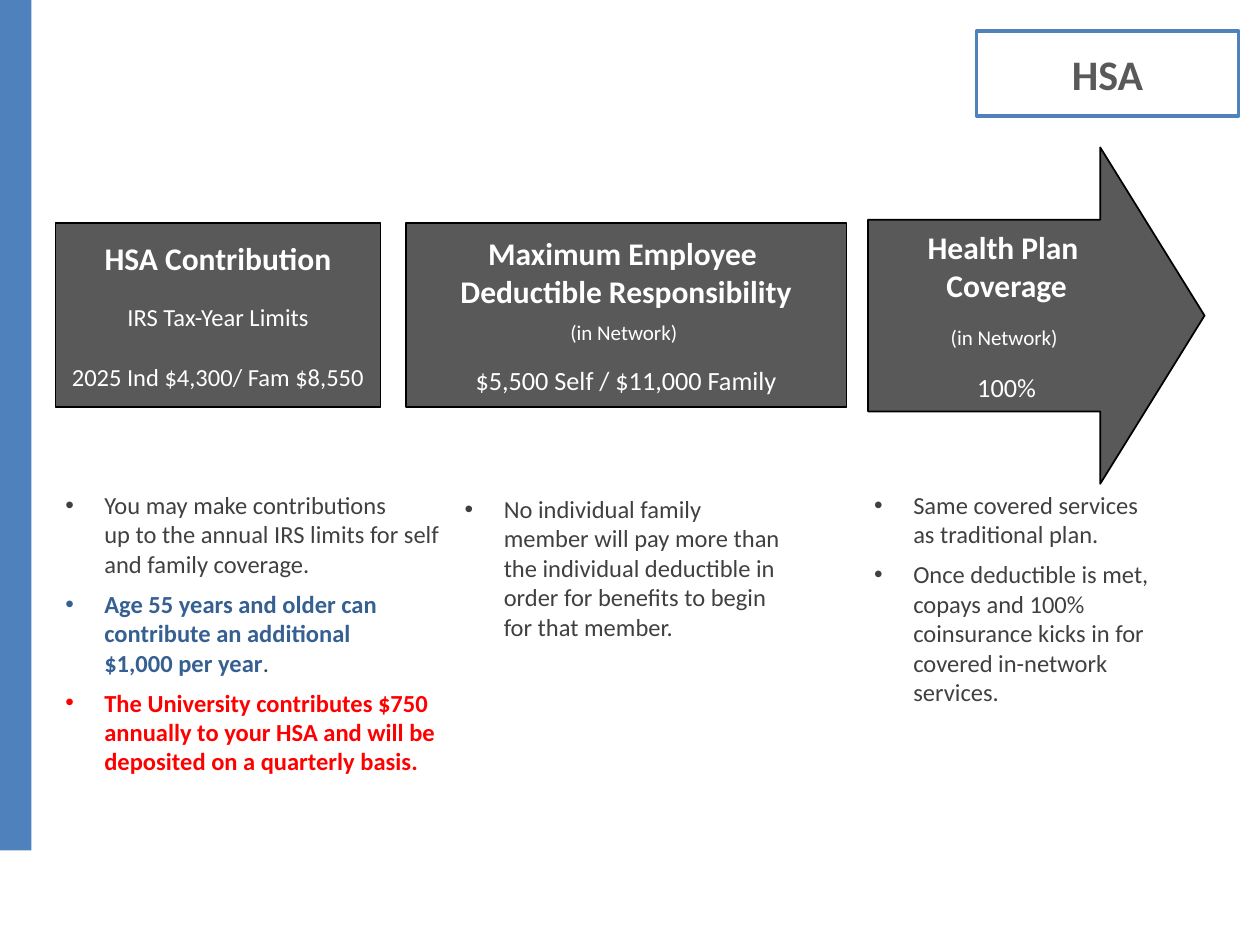
from dataclasses import dataclass

from lxml.etree import SubElement
from pptx import Presentation
from pptx.dml.color import RGBColor
from pptx.enum.shapes import MSO_SHAPE as Preset
from pptx.enum.text import MSO_ANCHOR as Anchor, PP_ALIGN as Align
from pptx.oxml.ns import qn
from pptx.util import Inches, Pt

BLUE = RGBColor(0x4F, 0x81, 0xBD)
DARK_BLUE = RGBColor(0x37, 0x60, 0x92)
GRAY = RGBColor(0x59, 0x59, 0x59)
TEXT_GRAY = RGBColor(0x40, 0x40, 0x40)
RED = RGBColor(0xFF, 0, 0)
WHITE = RGBColor(0xFF, 0xFF, 0xFF)
BLACK = RGBColor(0, 0, 0)
FONT = "Calibri"
INDENT = Inches(0.31)


@dataclass(frozen=True)
class Box:
    left: float
    top: float
    width: float
    height: float

    def lengths(self) -> list:
        return [Inches(v) for v in (self.left, self.top, self.width, self.height)]


@dataclass(frozen=True)
class Line:
    text: str
    size: float
    bold: bool = False
    before: float = 0
    color: RGBColor = WHITE


@dataclass(frozen=True)
class Bullet:
    text: str
    color: RGBColor = TEXT_GRAY
    bold: bool = False
    ending: str = ""


@dataclass(frozen=True)
class Step:
    preset: Preset
    box: Box
    lines: tuple
    bullet_box: Box
    bullets: tuple


STEPS = (
    Step(
        Preset.RECTANGLE, Box(0.44, 1.77, 2.58, 1.46),
        (Line("HSA Contribution", 18, True),
         Line("IRS Tax-Year Limits", 14, before=14.6),
         Line("2025 Ind $4,300/ Fam $8,550", 14, before=17)),
        Box(0.42, 3.84, 3.17, 2.39),
        (Bullet("You may make contributions\vup to the annual IRS limits for "
                "self and family coverage."),
         Bullet("Age 55 years and older can contribute an additional\v"
                "$1,000 per year", DARK_BLUE, True, "."),
         Bullet("The University contributes $750 annually to your HSA and will "
                "be deposited on a quarterly basis.", RED, True)),
    ),
    Step(
        Preset.RECTANGLE, Box(3.22, 1.77, 3.5, 1.46),
        (Line("Maximum Employee ", 18, True),
         Line("Deductible Responsibility", 18, True),
         Line("(in Network) ", 12, before=5.7),
         Line("$5,500 Self / $11,000 Family", 15, before=11.4)),
        Box(3.59, 3.87, 2.7, 1.51),
        (Bullet("No individual family member will pay more than the individual "
                "deductible in order for benefits to begin for that member."),),
    ),
    Step(
        Preset.RIGHT_ARROW, Box(6.89, 1.17, 2.67, 2.67),
        (Line("Health Plan ", 18, True),
         Line("Coverage", 18, True),
         Line("(in Network) ", 12, before=11.8),
         Line("100%", 15, before=12.6)),
        Box(6.84, 3.84, 2.5, 1.83),
        (Bullet("Same covered services as traditional plan."),
         Bullet("Once deductible is met, copays and 100% coinsurance kicks in "
                "for covered in-network services.")),
    ),
)


def paragraph_at(frame, index: int):
    return frame.paragraphs[0] if index == 0 else frame.add_paragraph()


def set_font(font, size: float, color: RGBColor, bold: bool) -> None:
    font.name = FONT
    font.size = Pt(size)
    font.bold = bold
    font.color.rgb = color


def draw_shape(slide, preset, box: Box, fill=None, line=None, width: float = 1):
    shape = slide.shapes.add_shape(preset, *box.lengths())
    shape.shadow.inherit = False
    if fill is None:
        shape.fill.background()
    else:
        shape.fill.solid()
        shape.fill.fore_color.rgb = fill
    if line is None:
        shape.line.fill.background()
    else:
        shape.line.color.rgb = line
        shape.line.width = Pt(width)
    return shape


def write_lines(shape, lines: tuple) -> None:
    frame = shape.text_frame
    frame.word_wrap = False
    frame.vertical_anchor = Anchor.MIDDLE
    for index, line in enumerate(lines):
        paragraph = paragraph_at(frame, index)
        paragraph.text = line.text
        paragraph.alignment = Align.CENTER
        if line.before:
            paragraph.space_before = Pt(line.before)
        set_font(paragraph.font, line.size, line.color, line.bold)


def draw_bullets(slide, box: Box, bullets: tuple) -> None:
    frame = slide.shapes.add_textbox(*box.lengths()).text_frame
    frame.word_wrap = True
    for index, bullet in enumerate(bullets):
        paragraph = paragraph_at(frame, index)
        paragraph.text = bullet.text
        paragraph.space_after = Pt(6)
        properties = paragraph._p.get_or_add_pPr()
        properties.set("marL", str(INDENT))
        properties.set("indent", str(-INDENT))
        SubElement(properties, qn("a:buFont"), typeface="Arial")
        SubElement(properties, qn("a:buChar"), char="•")
        set_font(paragraph.font, 14, bullet.color, bullet.bold)
        if bullet.ending:
            run = paragraph.add_run()
            run.text = bullet.ending
            run.font.bold = False
            run.font.color.rgb = TEXT_GRAY


def main() -> None:
    presentation = Presentation()
    presentation.slide_width = Inches(10)
    presentation.slide_height = Inches(7.5)
    slide = presentation.slides.add_slide(presentation.slide_layouts[6])

    draw_shape(slide, Preset.RECTANGLE, Box(0, 0, 0.25, 6.75), BLUE)
    title = draw_shape(slide, Preset.RECTANGLE, Box(7.75, 0.25, 2.08, 0.67),
                       line=BLUE, width=2.25)
    write_lines(title, (Line("HSA", 24, True, color=GRAY),))

    for step in STEPS:
        shape = draw_shape(slide, step.preset, step.box, GRAY, BLACK)
        if step.preset == Preset.RIGHT_ARROW:
            shape.adjustments[0] = 0.57
            shape.adjustments[1] = 0.31
        write_lines(shape, step.lines)
        draw_bullets(slide, step.bullet_box, step.bullets)

    presentation.save("out.pptx")


if __name__ == "__main__":
    main()
